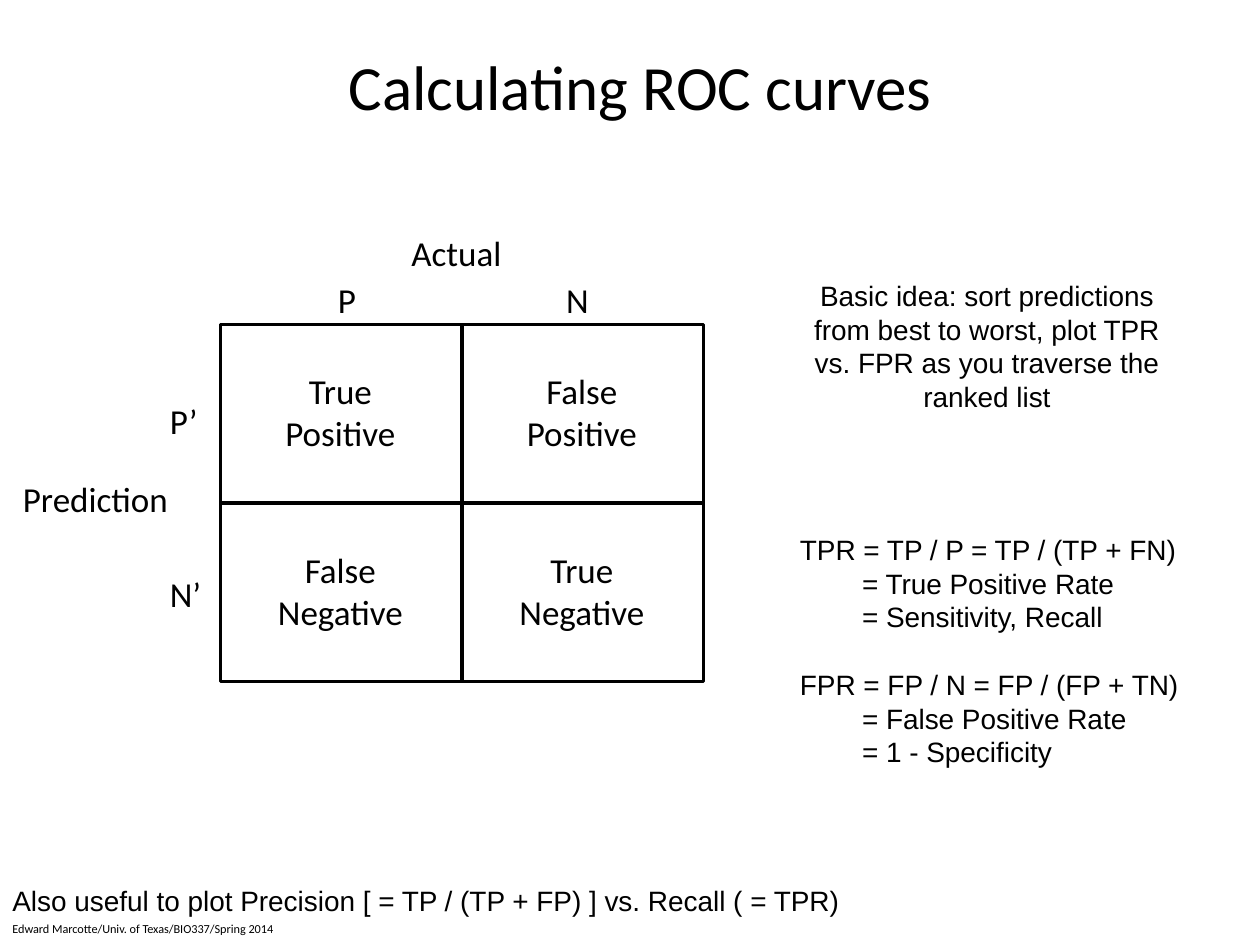
from pptx import Presentation
from pptx.dml.color import RGBColor
from pptx.enum.shapes import MSO_SHAPE as Shape
from pptx.enum.text import MSO_ANCHOR as Anchor, MSO_AUTO_SIZE as AutoSize, PP_ALIGN as Align
from pptx.util import Pt

COLORS = {"ink": "000000"}

# Content: labels are (text, left, top, width)
TITLE = "Calculating ROC curves"
OUTCOMES = [
    [("True", "Positive"), ("False", "Positive")],
    [("False", "Negative"), ("True", "Negative")],
]
AXIS_LABELS = [
    ("Actual", 228, 129, 67),
    ("Prediction", 6, 269.5, 99),
    ("P", 186, 155.5, 25),
    ("N", 316.5, 155.5, 28),
    ("P’", 90, 225, 32),
    ("N’", 90, 323.5, 34),
]
BASIC_IDEA = ("Basic idea: sort predictions from best to worst, "
              "plot TPR vs. FPR as you traverse the ranked list")
RATES = [
    ("TPR = TP / P = TP / (TP + FN)", "= True Positive Rate", "= Sensitivity, Recall"),
    ("FPR = FP / N = FP / (FP + TN)", "= False Positive Rate", "= 1 - Specificity"),
]
PRECISION_NOTE = "Also useful to plot Precision [ = TP / (TP + FP) ] vs. Recall ( = TPR)"
CREDIT = "Edward Marcotte/Univ. of Texas/BIO337/Spring 2014"

# Confusion matrix grid
GRID_LEFT, GRID_TOP = 126, 185.5
CELL_W, CELL_H = 138, 102
OUTCOME_W, OUTCOME_H = 87, 55.5

LINE = 19.25  # line pitch of the Arial text
INDENT = 35.5  # the definitions under each rate


def ink():
    return RGBColor.from_string(COLORS["ink"])


def write(box, lines, left, top, width, height, size=20, font="Calibri",
          align=Align.LEFT, wrap=False, pitch=None):
    """Place a box and fill it with (text, indent, space before) lines."""
    box.left, box.top, box.width, box.height = map(Pt, (left, top, width, height))
    frame = box.text_frame
    frame.word_wrap = wrap
    frame.auto_size = AutoSize.SHAPE_TO_FIT_TEXT
    frame.vertical_anchor = Anchor.TOP
    for number, (text, indent, before) in enumerate(lines):
        paragraph = frame.add_paragraph() if number else frame.paragraphs[0]
        paragraph.alignment = align
        if indent:
            paragraph._p.get_or_add_pPr().set("marL", str(Pt(indent)))
        if before:
            paragraph.space_before = Pt(before)
        if pitch:
            paragraph.line_spacing = Pt(pitch)
        run = paragraph.add_run()
        run.text = text
        run.font.size, run.font.name = Pt(size), font
        run.font.color.rgb = ink()


def plain(*texts):
    return [(text, 0, 0) for text in texts]


prs = Presentation()
prs.slide_width, prs.slide_height = Pt(720), Pt(540)
slide = prs.slides.add_slide(prs.slide_layouts[5])


def new_box():
    return slide.shapes.add_textbox(0, 0, 0, 0)


# Title
write(slide.shapes.title, plain(TITLE), 192, 23.5, 351.5, 51, size=36)

# Confusion matrix: cells, then the outcome centred in each
centers = []
for row, outcomes in enumerate(OUTCOMES):
    for column, outcome in enumerate(outcomes):
        left, top = GRID_LEFT + column * CELL_W, GRID_TOP + row * CELL_H
        cell = slide.shapes.add_shape(Shape.RECTANGLE, Pt(left), Pt(top), Pt(CELL_W), Pt(CELL_H))
        cell.shadow.inherit = False
        cell.fill.background()
        cell.line.color.rgb = ink()
        cell.line.width = Pt(2)
        centers.append((outcome, left + CELL_W / 2, top + CELL_H / 2))

for outcome, x, y in centers:
    write(new_box(), plain(*outcome), x - OUTCOME_W / 2 - 0.5, y - OUTCOME_H / 2 - 1,
          OUTCOME_W, OUTCOME_H, align=Align.CENTER)

# Axis labels
for text, left, top, width in AXIS_LABELS:
    write(new_box(), plain(text), left, top, width, 31.5)

# Explanation and rate definitions
write(new_box(), plain(BASIC_IDEA), 456, 155.5, 216, 85, size=16, font="Arial",
      align=Align.CENTER, wrap=True, pitch=LINE)
rate_lines = []
for formula, *meanings in RATES:
    rate_lines.append((formula, 0, LINE if rate_lines else 0))
    rate_lines += [(meaning, INDENT, 0) for meaning in meanings]
write(new_box(), rate_lines, 450, 300.75, 234, 143, size=16, font="Arial", pitch=LINE)

# Bottom note and credit
write(new_box(), plain(PRECISION_NOTE), 0, 501, 612, 26.5, size=16, font="Arial",
      wrap=True, pitch=LINE)
write(new_box(), plain(CREDIT), 0, 522.75, 168.5, 16, size=7)

prs.save("out.pptx")
